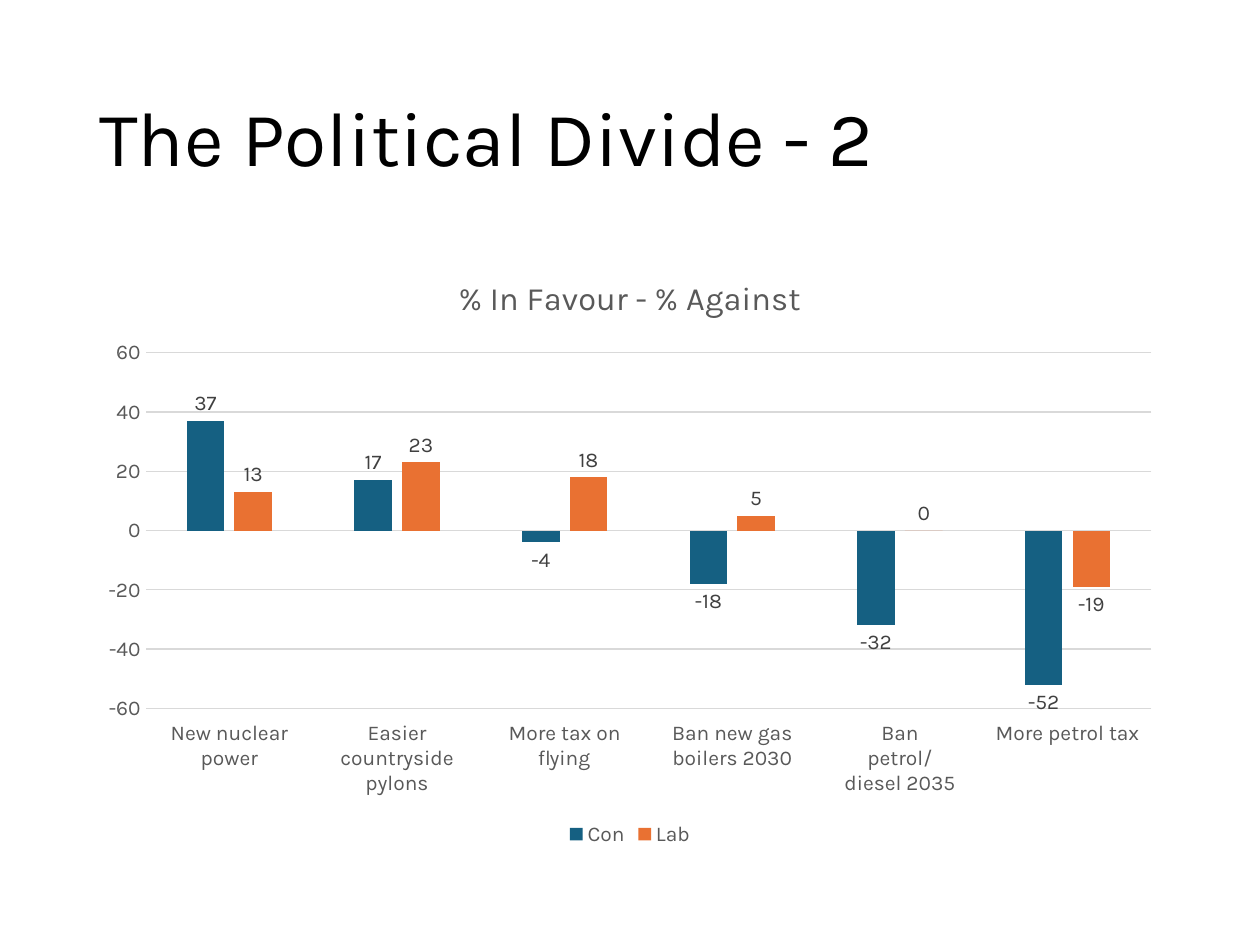
from pptx import Presentation
from pptx.chart.data import CategoryChartData
from pptx.dml.color import RGBColor
from pptx.enum.chart import (XL_CHART_TYPE, XL_LABEL_POSITION, XL_LEGEND_POSITION,
                             XL_TICK_LABEL_POSITION, XL_TICK_MARK)
from pptx.enum.text import MSO_ANCHOR
from pptx.util import Inches, Pt

COLORS = {"title": "000000", "text": "595959", "label": "404040",
          "grid": "D9D9D9", "Con": "156082", "Lab": "E97132"}
TOPICS = ["New nuclear power", "Easier countryside pylons", "More tax on flying",
          "Ban new gas boilers 2030", "Ban petrol/diesel 2035", "More petrol tax"]
BALANCES = {"Con": [37, 17, -4, -18, -32, -52], "Lab": [13, 23, 18, 5, 0, -19]}


def color(name):
    """Return the named colour."""
    return RGBColor.from_string(COLORS[name])


def format_font(font, size=12, tone="text", face="Karla"):
    """Apply the face, size and colour to a font."""
    font.name = face
    font.size = Pt(size)
    font.bold = False
    font.color.rgb = color(tone)


def write_text(frame, text, spacing=1.0, **style):
    """Write one formatted paragraph into a text frame."""
    para = frame.paragraphs[0]
    para.line_spacing = spacing
    span = para.add_run()
    span.text = text
    format_font(span.font, **style)


class SlideBuilder:
    """Hold the current slide and its shared margins."""

    left, width = Inches(0.69), Inches(8.62)

    def __init__(self, page):
        """Keep the page to draw on."""
        self.page = page

    def heading(self, text):
        """Add the slide heading."""
        box = self.page.shapes.add_textbox(self.left, Inches(0.4), self.width, Inches(1.45))
        frame = box.text_frame
        frame.word_wrap = True
        frame.vertical_anchor = MSO_ANCHOR.MIDDLE
        write_text(frame, text, spacing=0.9, size=44, tone="title")

    def column_chart(self, title, categories, series):
        """Add a clustered column chart with labelled columns."""
        data = CategoryChartData()
        data.categories = categories
        for name, values in series.items():
            data.add_series(name, values)
        chart = self.page.shapes.add_chart(
            XL_CHART_TYPE.COLUMN_CLUSTERED, self.left, Inches(2),
            self.width, Inches(4.76), data).chart
        format_font(chart.font, size=10, tone="title")
        chart.has_title = True
        write_text(chart.chart_title.text_frame, title, size=18.6)
        chart.chart_title.include_in_layout = False
        chart.has_legend = True
        chart.legend.position = XL_LEGEND_POSITION.BOTTOM
        chart.legend.include_in_layout = False
        format_font(chart.legend.font)
        self.axes(chart)
        self.columns(chart.plots[0])

    def axes(self, chart):
        """Format both axes and the gridlines."""
        for axis in (chart.category_axis, chart.value_axis):
            axis.major_tick_mark = axis.minor_tick_mark = XL_TICK_MARK.NONE
            format_font(axis.tick_labels.font)
        chart.category_axis.tick_label_position = XL_TICK_LABEL_POSITION.LOW
        values = chart.value_axis
        values.minimum_scale, values.maximum_scale, values.major_unit = -60, 60, 20
        values.format.line.fill.background()
        values.has_major_gridlines = True
        for line in (chart.category_axis.format.line, values.major_gridlines.format.line):
            line.color.rgb = color("grid")
            line.width = Pt(0.75)

    def columns(self, plot):
        """Format the columns and their value labels."""
        plot.gap_width, plot.overlap, plot.vary_by_categories = 219, -27, False
        for series in plot.series:
            series.invert_if_negative = False
            series.format.fill.solid()
            series.format.fill.fore_color.rgb = color(series.name)
            labels = series.data_labels
            labels.show_value = True
            labels.position = XL_LABEL_POSITION.OUTSIDE_END
            format_font(labels.font, tone="label")


def main():
    """Build and save the deck."""
    deck = Presentation()
    deck.slide_width, deck.slide_height = Inches(10), Inches(7.5)
    builder = SlideBuilder(deck.slides.add_slide(deck.slide_layouts[6]))
    builder.heading("The Political Divide - 2")
    builder.column_chart("% In Favour - % Against", TOPICS, BALANCES)
    deck.save("out.pptx")


if __name__ == "__main__":
    main()
